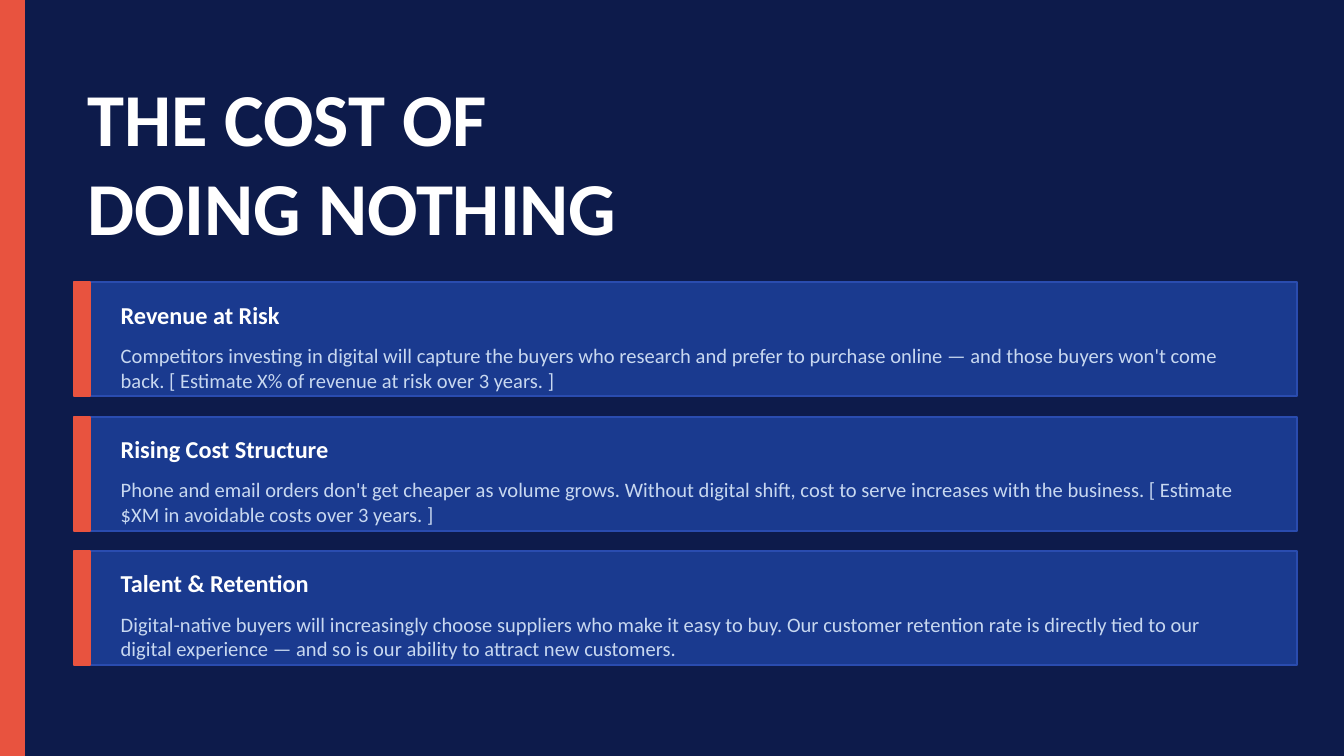
from pptx import Presentation
from pptx.dml.color import RGBColor
from pptx.enum.shapes import MSO_SHAPE
from pptx.enum.text import MSO_ANCHOR, MSO_AUTO_SIZE, PP_ALIGN
from pptx.util import Inches, Pt

HEADLINE = "THE COST OF\nDOING NOTHING"
RISKS = [
    ("Revenue at Risk",
     "Competitors investing in digital will capture the buyers who research and prefer "
     "to purchase online — and those buyers won't come back. "
     "[ Estimate X% of revenue at risk over 3 years. ]"),
    ("Rising Cost Structure",
     "Phone and email orders don't get cheaper as volume grows. Without digital shift, "
     "cost to serve increases with the business. "
     "[ Estimate $XM in avoidable costs over 3 years. ]"),
    ("Talent & Retention",
     "Digital-native buyers will increasingly choose suppliers who make it easy to buy. "
     "Our customer retention rate is directly tied to our digital experience — "
     "and so is our ability to attract new customers."),
]
COLORS = {
    "background": "0D1B4B",
    "accent": "E8533F",
    "card": "1A3A8F",
    "card_edge": "2A4CAF",
    "heading": "FFFFFF",
    "detail": "C8D8F0",
}
FONT = "Calibri"
SLIDE_WIDTH = 10
SLIDE_HEIGHT = SLIDE_WIDTH * 9 / 16
CARD_LEFT, CARD_TOP, CARD_WIDTH, CARD_HEIGHT = 0.55, 2.1, 9.1, 0.85
CARD_PITCH = 1.0
TEXT_LEFT = 0.8


def color(name):
    return RGBColor.from_string(COLORS[name])


def add_block(slide, left, top, width, height, fill, edge):
    block = slide.shapes.add_shape(
        MSO_SHAPE.RECTANGLE, Inches(left), Inches(top), Inches(width), Inches(height))
    block.shadow.inherit = False
    block.fill.solid()
    block.fill.fore_color.rgb = color(fill)
    block.line.color.rgb = color(edge)
    block.line.width = Pt(1)


def write(frame, text, size, ink, bold=False):
    frame.text = text
    frame.word_wrap = True
    frame.auto_size = MSO_AUTO_SIZE.NONE
    frame.vertical_anchor = MSO_ANCHOR.MIDDLE
    for paragraph in frame.paragraphs:
        paragraph.alignment = PP_ALIGN.LEFT
        for run in paragraph.runs:
            run.font.name = FONT
            run.font.size = Pt(size)
            run.font.bold = bold
            run.font.color.rgb = color(ink)


def add_text(slide, left, top, width, height, *style):
    label = slide.shapes.add_textbox(
        Inches(left), Inches(top), Inches(width), Inches(height))
    write(label.text_frame, *style)


def add_risk(slide, top, heading, detail):
    add_block(slide, CARD_LEFT, top, CARD_WIDTH, CARD_HEIGHT, "card", "card_edge")
    add_block(slide, CARD_LEFT, top, 0.12, CARD_HEIGHT, "accent", "accent")
    add_text(slide, TEXT_LEFT, top + 0.05, 2.2, 0.38, heading, 13, "heading", True)
    add_text(slide, TEXT_LEFT, top + 0.46, 8.6, 0.35, detail, 11, "detail")


def main():
    deck = Presentation()
    deck.slide_width = Inches(SLIDE_WIDTH)
    deck.slide_height = Inches(SLIDE_HEIGHT)
    slide = deck.slides.add_slide(deck.slide_layouts[5])
    slide.background.fill.solid()
    slide.background.fill.fore_color.rgb = color("background")

    add_block(slide, 0, 0, 0.18, SLIDE_HEIGHT, "accent", "accent")

    title = slide.shapes.title
    title.left, title.top = Inches(CARD_LEFT), Inches(0.5)
    title.width, title.height = Inches(7), Inches(1.4)
    write(title.text_frame, HEADLINE, 40, "heading", True)

    for index, (heading, detail) in enumerate(RISKS):
        add_risk(slide, CARD_TOP + index * CARD_PITCH, heading, detail)

    deck.save("out.pptx")


if __name__ == "__main__":
    main()
